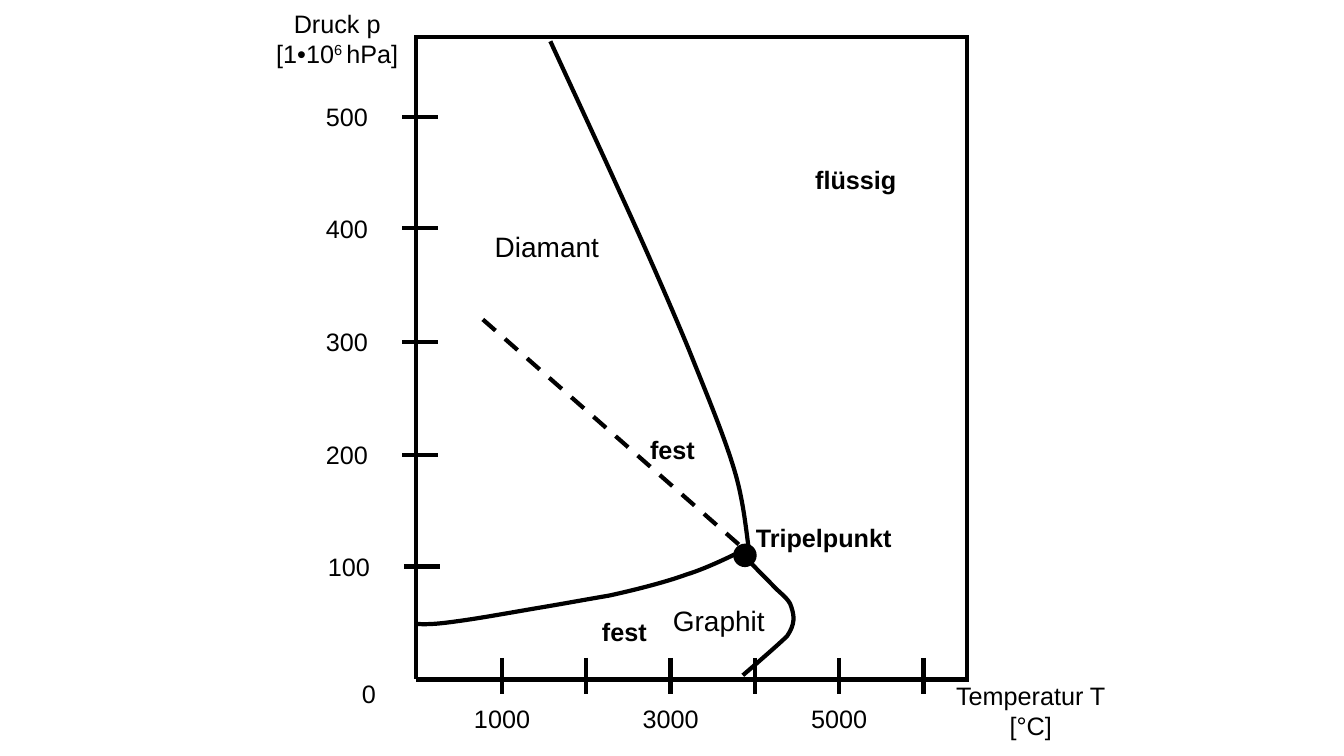
from lxml.etree import SubElement
from pptx import Presentation
from pptx.dml.color import RGBColor
from pptx.enum.dml import MSO_LINE
from pptx.enum.shapes import MSO_CONNECTOR, MSO_SHAPE
from pptx.enum.text import MSO_AUTO_SIZE, PP_ALIGN
from pptx.oxml.ns import qn
from pptx.util import Pt

BLACK = "000000"
LEFT, TOP, RIGHT, BOTTOM = 297.4, 26.6, 690.5, 485.3


def add_line(page, x1, y1, x2, y2):
    line = page.shapes.add_connector(MSO_CONNECTOR.STRAIGHT, Pt(x1), Pt(y1), Pt(x2), Pt(y2))
    line.line.color.rgb = RGBColor.from_string(BLACK)
    line.line.width = Pt(3)
    SubElement(line._element.spPr, qn("a:effectLst"))
    return line


def add_label(page, left, top, width, height, lines, size=18, bold=False, wrap=True, align=PP_ALIGN.CENTER):
    box = page.shapes.add_textbox(Pt(left), Pt(top), Pt(width), Pt(height))
    frame = box.text_frame
    frame.word_wrap = wrap
    frame.auto_size = MSO_AUTO_SIZE.SHAPE_TO_FIT_TEXT
    for number, pieces in enumerate(lines):
        para = frame.add_paragraph() if number else frame.paragraphs[0]
        para.alignment = align
        for position, piece in enumerate(pieces):
            span = para.add_run()
            span.text = piece
            span.font.name = "Arial"
            span.font.size = Pt(size)
            span.font.bold = bold
            span.font.color.rgb = RGBColor.from_string(BLACK)
            if position == 1:
                span.font._element.set("baseline", "30000")


deck = Presentation()
deck.slide_width, deck.slide_height = Pt(960), Pt(540)
page = deck.slides.add_slide(deck.slide_layouts[6])

add_line(page, LEFT, TOP, LEFT, BOTTOM)
add_line(page, RIGHT + 1.5, BOTTOM, LEFT, BOTTOM)

add_label(page, 180, 2.2, 121.7, 51.1, [["Druck p"], ["[1•10", "6 ", "hPa]"]])
add_label(page, 664.6, 482.4, 143.3, 51.1, [["Temperatur T"], ["[°C]"]])

triple_point = page.shapes.add_shape(MSO_SHAPE.OVAL, Pt(524.2), Pt(388.8), Pt(15.8), Pt(15.8))
triple_point.shadow.inherit = False
triple_point.fill.solid()
triple_point.fill.fore_color.rgb = RGBColor.from_string(BLACK)
triple_point.line.color.rgb = RGBColor.from_string(BLACK)
triple_point.line.width = Pt(1)

phase_boundaries = [
    [(393.1, 29.5), (409.7, 65.5), (426.2, 100.8), (442.8, 137.5),
     (459.4, 173.5), (478.1, 216), (491.8, 249.1),
     (505.4, 283), (517.7, 312.5), (524.9, 337),
     (532.1, 361.4), (533.5, 385.9), (536, 399.6)],
    [(297.4, 445.7), (308.2, 446.4), (318.2, 445), (333.4, 442.8),
     (348.5, 440.6), (372.2, 436.3), (389.5, 433.4),
     (406.1, 430.6), (417.6, 428.4), (434.9, 425.5),
     (451.4, 421.9), (474.5, 416.2), (490.3, 410.4),
     (506.9, 405.4), (530.6, 393.1), (530.6, 393.1)],
    [(533.5, 398.9), (539.3, 405.4), (545.8, 411.8), (551.5, 417.6),
     (556.6, 423.4), (563.8, 427.7), (565.2, 433.4),
     (567.4, 439.9), (568.1, 445.7), (562.3, 454.3),
     (556.6, 460.1), (530.6, 482.4), (530.6, 482.4)],
]
for controls in phase_boundaries:
    start, *bends = [(Pt(x), Pt(y)) for x, y in controls]
    builder = page.shapes.build_freeform(*start)
    builder.add_line_segments(bends, close=False)
    boundary = builder.convert_to_shape()
    boundary.shadow.inherit = False
    boundary.fill.background()
    boundary.line.color.rgb = RGBColor.from_string(BLACK)
    boundary.line.width = Pt(3)
    outline = next(boundary._element.iter(qn("a:path")))
    segments = outline.findall(qn("a:lnTo"))
    for first in range(0, len(segments), 3):
        curve = SubElement(outline, qn("a:cubicBezTo"))
        for segment in segments[first:first + 3]:
            curve.append(segment[0])
            outline.remove(segment)

for text, left, top, width in [
    ("flüssig", 557.3, 113.8, 108),
    ("fest", 441.4, 306.7, 77.8),
    ("fest", 414.7, 437, 62.6),
]:
    add_label(page, left, top, width, 28.8, [[text]], bold=True)

for step, y in enumerate([83.5, 162.9, 244.1, 324.9, 404.6]):
    shift = 1.5 if step == 4 else 0
    add_line(page, 287.2 + shift, y, 312.8 + shift, y)
    add_label(page, 225.4 + shift, y - 14.4, 44.6, 28.8, [[str(500 - 100 * step)]], wrap=False)

for step in range(6):
    x = 358.6 + 60.2 * step
    add_line(page, x, 470, x, 495.8)
    if step % 2 == 0:
        add_label(page, x - 27.35, 498.6, 54.7, 28.8, [[str(1000 * (step + 1))]], wrap=False)

solid_boundary = add_line(page, 344.9, 228.2, 535, 395.3)
solid_boundary.line.dash_style = MSO_LINE.DASH

add_label(page, 345.6, 160.2, 90, 31.7, [["Diamant"]], size=20, wrap=False)
add_label(page, 473.2, 427.3, 80.6, 31.7, [["Graphit"]], size=20, wrap=False)

add_line(page, RIGHT, TOP, RIGHT, BOTTOM)
add_line(page, RIGHT + 1.5, TOP, LEFT - 1.5, TOP)
add_label(page, 251.3, 481, 24.5, 28.8, [["0"]], wrap=False)
add_label(page, 532.8, 369.4, 130.3, 26.6, [["Tripelpunkt"]], bold=True, align=PP_ALIGN.LEFT)

deck.save("out.pptx")
